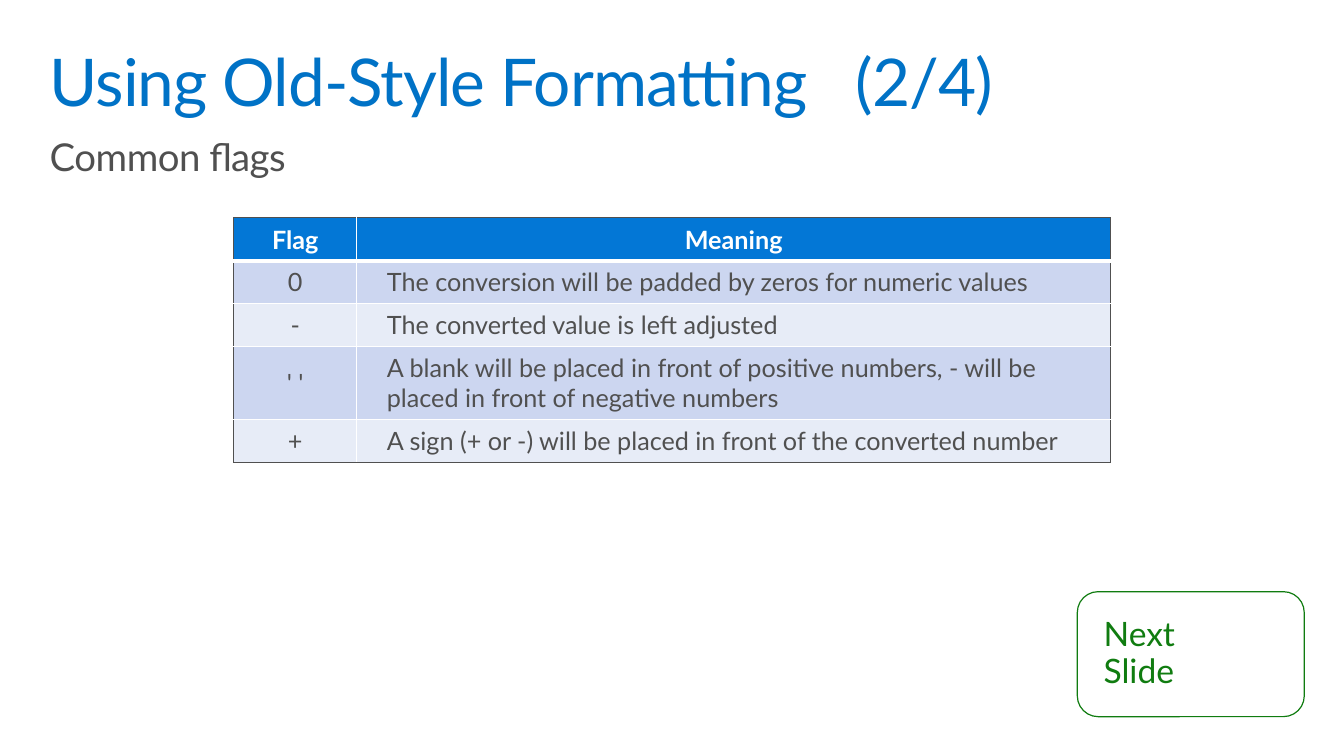
from lxml.etree import SubElement
from pptx import Presentation
from pptx.dml.color import RGBColor
from pptx.enum.shapes import MSO_SHAPE
from pptx.enum.text import MSO_ANCHOR, MSO_AUTO_SIZE, PP_ALIGN
from pptx.oxml.ns import qn
from pptx.util import Cm, Pt

TITLE = "Using Old-Style Formatting\t(2/4)"
SUBTITLE = "Common flags"
BUTTON = "Next\vSlide"
FLAGS = [
    ("Flag", "Meaning"),
    ("0", "The conversion will be padded by zeros for numeric values"),
    ("-", "The converted value is left adjusted"),
    ("' '", "A blank will be placed in front of positive numbers, "
            "- will be placed in front of negative numbers"),
    ("+", "A sign (+ or -) will be placed in front of the converted number"),
]
COLORS = {"title": "0072C6", "text": "505050", "green": "107C10", "white": "FFFFFF",
          "header": "0377D6", "odd": "CCD6F0", "even": "E7ECF7"}
FONT = "Lato"
COL_WIDTHS = [Cm(3.1), Cm(19)]
ROW_HEIGHTS = [Cm(1.08), Cm(1.08), Cm(1.08), Cm(1.84), Cm(1.08)]


def rgb(name):
    return RGBColor.from_string(COLORS[name])


def style_text(p, size, color, bold=False, spacing=0):
    """Format every run of a paragraph; spacing is in hundredths of a point."""
    for r in p.runs:
        r.font.name = FONT
        r.font.size = Pt(size)
        r.font.bold = bold
        r.font.color.rgb = rgb(color)
        if spacing:
            r.font._element.set("spc", str(spacing))


def set_margins(tf, x, y):
    tf.margin_left = tf.margin_right = x
    tf.margin_top = tf.margin_bottom = y


def fill_placeholder(sp, text, top, size, color, spacing):
    sp.left, sp.top, sp.width, sp.height = Cm(1), top, Cm(31.88), Cm(2.24)
    tf = sp.text_frame
    tf.text = text
    tf.word_wrap = True
    tf.auto_size = MSO_AUTO_SIZE.NONE
    tf.vertical_anchor = MSO_ANCHOR.TOP
    set_margins(tf, Cm(0.25), Cm(0.25))
    p = tf.paragraphs[0]
    p.alignment = PP_ALIGN.LEFT
    p.line_spacing = 0.9
    p.space_before = Pt(0)
    pPr = p._p.get_or_add_pPr()
    pPr.set("marL", "0")
    pPr.set("indent", "0")
    SubElement(pPr, qn("a:buNone"))
    if "\t" in text:
        tabs = SubElement(pPr, qn("a:tabLst"))
        SubElement(tabs, qn("a:tab"), pos=str(Cm(31.12)), algn="r")
    style_text(p, size, color, spacing=spacing)


def set_border(cell, side, color, width):
    ln = SubElement(cell._tc.get_or_add_tcPr(), qn(f"a:ln{side}"), w=str(Pt(width)))
    fill = SubElement(ln, qn("a:solidFill"))
    SubElement(fill, qn("a:srgbClr"), val=COLORS[color])


def format_cell(cell, text, row, col):
    header = row == 0
    outer = {"L": col == 0, "R": col == len(COL_WIDTHS) - 1,
             "T": header, "B": row == len(FLAGS) - 1}
    for side, is_outer in outer.items():
        thick = (header and side == "B") or (row == 1 and side == "T")
        set_border(cell, side, "text" if is_outer else "white", 3 if thick else 1)
    cell.fill.solid()
    cell.fill.fore_color.rgb = rgb("header" if header else "odd" if row % 2 else "even")
    cell.vertical_anchor = MSO_ANCHOR.MIDDLE
    set_margins(cell, Cm(0.76), Cm(0.15))
    cell.text_frame.text = text
    p = cell.text_frame.paragraphs[0]
    p.alignment = PP_ALIGN.CENTER if header or col == 0 else PP_ALIGN.LEFT
    style_text(p, 18, "white" if header else "text", bold=header)


def add_flag_table(s):
    frame = s.shapes.add_table(len(FLAGS), len(COL_WIDTHS), Cm(5.89), Cm(5.49),
                               sum(COL_WIDTHS), sum(ROW_HEIGHTS))
    table = frame.table
    for column, width in zip(table.columns, COL_WIDTHS):
        column.width = width
    for i, (height, texts) in enumerate(zip(ROW_HEIGHTS, FLAGS)):
        table.rows[i].height = height
        for j, text in enumerate(texts):
            format_cell(table.cell(i, j), text, i, j)


def add_next_button(s):
    sp = s.shapes.add_shape(MSO_SHAPE.ROUNDED_RECTANGLE,
                            Cm(27.15), Cm(14.91), Cm(5.72), Cm(3.15))
    sp.shadow.inherit = False
    sp.fill.solid()
    sp.fill.fore_color.rgb = rgb("white")
    sp.line.color.rgb = rgb("green")
    sp.line.width = Pt(0.85)
    tf = sp.text_frame
    tf.text = BUTTON
    tf.word_wrap = True
    tf.vertical_anchor = MSO_ANCHOR.MIDDLE
    set_margins(tf, Cm(0.51), Cm(0.41))
    p = tf.paragraphs[0]
    p.alignment = PP_ALIGN.LEFT
    p.line_spacing = 0.9
    style_text(p, 24, "green")


def main():
    prs = Presentation()
    prs.slide_width, prs.slide_height = Cm(33.87), Cm(19.05)
    s = prs.slides.add_slide(prs.slide_layouts[1])
    fill_placeholder(s.shapes.title, TITLE, Cm(1), 47, "title", -70)
    fill_placeholder(s.placeholders[1], SUBTITLE, Cm(3.24), 27.4, "text", -30)
    add_next_button(s)
    add_flag_table(s)
    prs.save("out.pptx")


if __name__ == "__main__":
    main()
